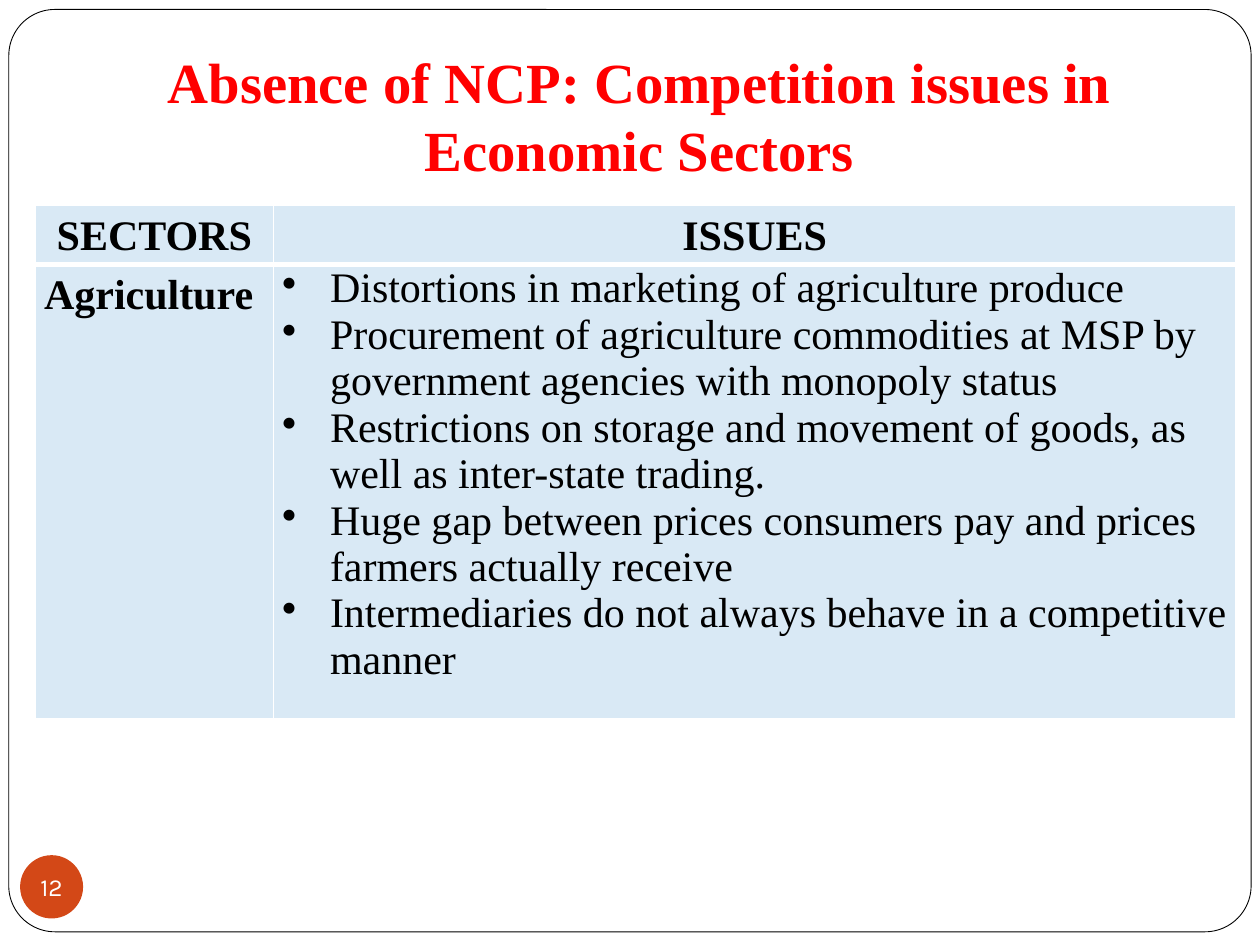
from lxml import etree
from pptx import Presentation
from pptx import util as u
from pptx.dml.color import RGBColor
from pptx.enum import shapes, text
from pptx.oxml import ns

WIDTH, HEIGHT = u.Inches(10), u.Inches(7.5)
BLACK = RGBColor(0x00, 0x00, 0x00)
WHITE = RGBColor(0xFF, 0xFF, 0xFF)
RED = RGBColor(0xFF, 0x00, 0x00)
ORANGE = RGBColor(0xD3, 0x48, 0x17)
BLUE = RGBColor(0x00, 0x70, 0xC0)
SERIF = "Times New Roman"
BULLET_INDENT = u.Inches(0.38)
COLUMN_SHARES = (0.189, 0.764)
ROW_SHARES = (0.058, 0.443)
HEADERS = ("SECTORS", "ISSUES")
SECTOR = "Agriculture"
ISSUES = (
    "Distortions in marketing of agriculture produce",
    "Procurement of agriculture commodities at MSP by government agencies with monopoly status",
    "Restrictions on storage and movement of goods, as well as inter-state trading.",
    "Huge gap between prices consumers pay and prices farmers actually receive",
    "Intermediaries do not always behave in a competitive manner",
)


def place(left, top, width, height):
    """Turn shares of the slide into a left, top, width, height box."""
    return (int(left * WIDTH), int(top * HEIGHT), int(width * WIDTH), int(height * HEIGHT))


def style(paragraph, size, color, name=SERIF, bold=False, align=text.PP_ALIGN.CENTER):
    """Set the font and alignment of a paragraph."""
    font = paragraph.font
    font.size, font.name, font.bold = u.Pt(size), name, bold
    font.color.rgb = color
    paragraph.alignment = align


def set_margins(box, left, top, right, bottom):
    """Set the inner margins of a text frame or cell in inches."""
    box.margin_left, box.margin_top = u.Inches(left), u.Inches(top)
    box.margin_right, box.margin_bottom = u.Inches(right), u.Inches(bottom)


def add_panel(slide, kind, box, fill):
    """Add a filled preset shape without shadow or outline."""
    shape = slide.shapes.add_shape(kind, *box)
    shape.shadow.inherit = False
    shape.fill.solid()
    shape.fill.fore_color.rgb = fill
    shape.line.fill.background()
    return shape


def add_frame(slide):
    """Add the rounded outline around the slide."""
    frame = add_panel(slide, shapes.MSO_SHAPE.ROUNDED_RECTANGLE,
                      place(0.007, 0.01, 0.986, 0.976), WHITE)
    frame.adjustments[0] = 0.05
    frame.line.color.rgb = BLACK
    frame.line.width = u.Pt(0.5)


def add_title(slide, words):
    """Add the bottom-anchored slide title."""
    frame = slide.shapes.add_textbox(*place(0.043, 0.04, 0.929, 0.167)).text_frame
    frame.word_wrap = True
    frame.vertical_anchor = text.MSO_ANCHOR.BOTTOM
    set_margins(frame, 0.1, 0.05, 0.1, 0.1)
    frame.text = words
    style(frame.paragraphs[0], 32.4, RED, bold=True)


def add_page_number(slide, number):
    """Add the round page number badge."""
    badge = add_panel(slide, shapes.MSO_SHAPE.OVAL, place(0.016, 0.905, 0.05, 0.067), ORANGE)
    frame = badge.text_frame
    frame.word_wrap = False
    frame.vertical_anchor = text.MSO_ANCHOR.MIDDLE
    set_margins(frame, 0, 0, 0, 0)
    frame.text = number
    style(frame.paragraphs[0], 14, WHITE, name="Karla")


def add_bullet(paragraph):
    """Give a paragraph a hanging round bullet."""
    properties = paragraph._p.get_or_add_pPr()
    properties.set("marL", str(BULLET_INDENT))
    properties.set("indent", str(-BULLET_INDENT))
    etree.SubElement(properties, ns.qn("a:buChar")).set("char", "•")


def paint_cell(cell, top, bottom):
    """Set white cell borders and a translucent blue fill."""
    properties = cell._tc.get_or_add_tcPr()
    for side, points in (("L", 1), ("R", 1), ("T", top), ("B", bottom)):
        line = etree.SubElement(properties, ns.qn(f"a:ln{side}"), w=str(u.Pt(points)))
        fill = etree.SubElement(line, ns.qn("a:solidFill"))
        etree.SubElement(fill, ns.qn("a:srgbClr"), val=str(WHITE))
    cell.fill.solid()
    cell.fill.fore_color.rgb = BLUE
    color = properties.find(ns.qn("a:solidFill")).find(ns.qn("a:srgbClr"))
    etree.SubElement(color, ns.qn("a:alpha"), val="15000")


def fill_label(cell, words, align):
    """Write a bold label into a table cell."""
    cell.text = words
    paragraph = cell.text_frame.paragraphs[0]
    paragraph.line_spacing, paragraph.space_after = 1.15, u.Pt(10)
    style(paragraph, 24, BLACK, bold=True, align=align)


def fill_bullets(cell, items):
    """Write a bulleted list into a table cell."""
    cell.text = "\n".join(items)
    for paragraph in cell.text_frame.paragraphs:
        style(paragraph, 24, BLACK, align=text.PP_ALIGN.LEFT)
        add_bullet(paragraph)


def add_issue_table(slide):
    """Add the table of sectors and their issues."""
    box = place(0.028, 0.217, sum(COLUMN_SHARES), sum(ROW_SHARES))
    table = slide.shapes.add_table(len(ROW_SHARES), len(COLUMN_SHARES), *box).table
    for column, share in zip(table.columns, COLUMN_SHARES):
        column.width = int(share * WIDTH)
    for index, (row, share) in enumerate(zip(table.rows, ROW_SHARES)):
        row.height = int(share * HEIGHT)
        for cell in row.cells:
            set_margins(cell, 0.07, 0.01, 0.07, 0)
            paint_cell(cell, *((3, 1) if index else (1, 3)))
    for column, header in enumerate(HEADERS):
        fill_label(table.cell(0, column), header, text.PP_ALIGN.CENTER)
    fill_label(table.cell(1, 0), SECTOR, text.PP_ALIGN.LEFT)
    fill_bullets(table.cell(1, 1), ISSUES)


def main():
    """Build and save the slide."""
    presentation = Presentation()
    presentation.slide_width, presentation.slide_height = WIDTH, HEIGHT
    slide = presentation.slides.add_slide(presentation.slide_layouts[6])
    add_frame(slide)
    add_title(slide, "Absence of NCP: Competition issues in Economic Sectors")
    add_page_number(slide, "12")
    add_issue_table(slide)
    presentation.save("out.pptx")


if __name__ == "__main__":
    main()
